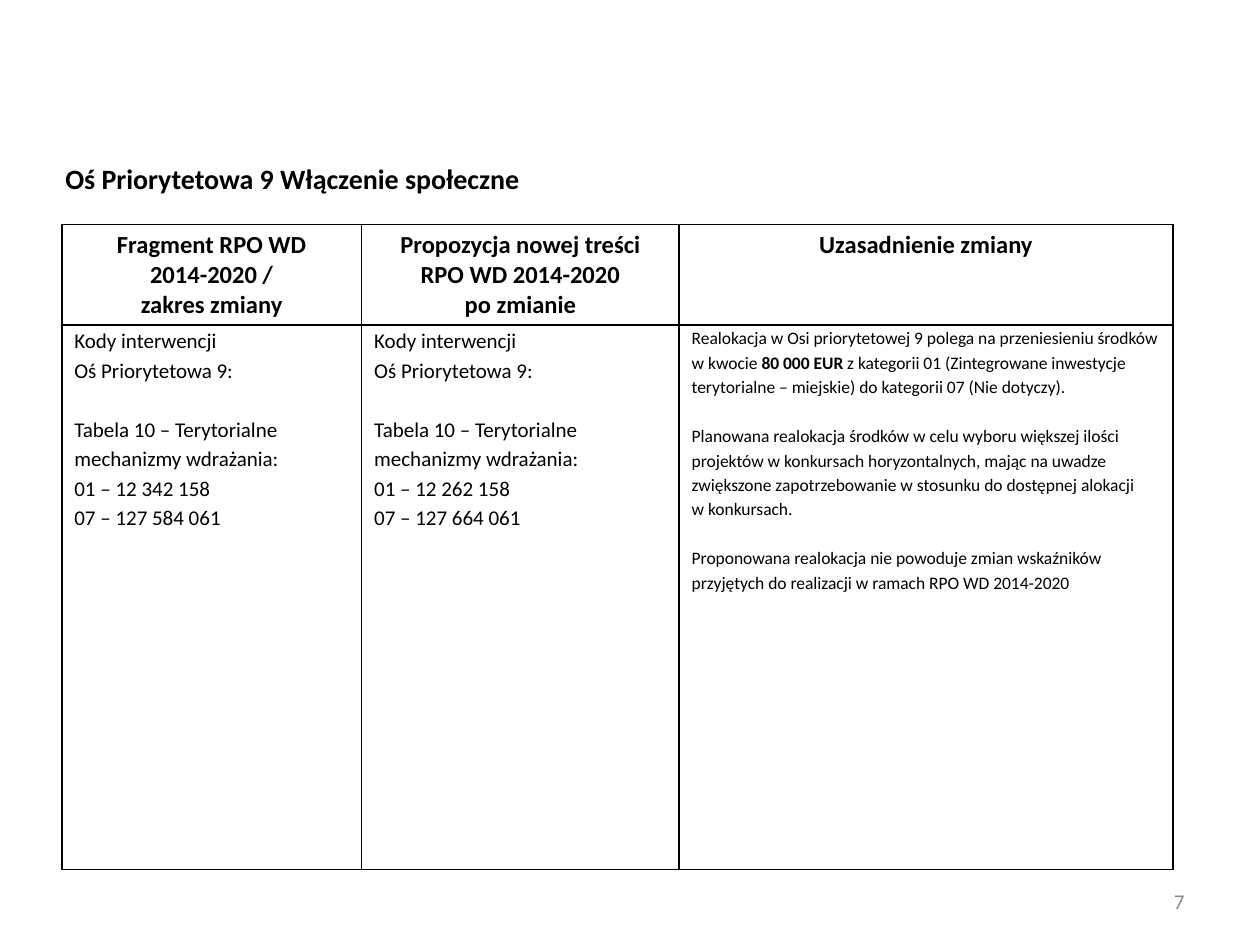
import pptx
import pptx.util
import pptx.dml.color
import pptx.enum.text
import pptx.oxml
import pptx.oxml.ns

Inches, Pt = pptx.util.Inches, pptx.util.Pt
ALIGN = pptx.enum.text.PP_ALIGN
ANCHOR = pptx.enum.text.MSO_ANCHOR

COLORS = {"text": "000000", "number": "898989", "border": "000000"}
FONT = "Calibri"
LINE_SPACING = 1.15
LINE_HEIGHT = 1.22 * LINE_SPACING  # height of one body line per point of text size


class SlideBuilder:
    def __init__(self, slide):
        self.slide = slide

    def style(self, r, size, color="text", bold=False):
        r.font.name = FONT
        r.font.size = Pt(size)
        r.font.bold = bold
        r.font.color.rgb = pptx.dml.color.RGBColor.from_string(COLORS[color])

    def text(self, box, text, size, color="text", bold=False,
             align=ALIGN.LEFT, anchor=ANCHOR.TOP):
        sp = self.slide.shapes.add_textbox(*map(Inches, box))
        tf = sp.text_frame
        tf.word_wrap = True
        tf.vertical_anchor = anchor
        tf.text = text
        p = tf.paragraphs[0]
        p.alignment = align
        self.style(p.runs[0], size, color, bold)

    def border(self, cell):
        tc_pr = cell._tc.get_or_add_tcPr()
        for i, side in enumerate(("lnL", "lnR", "lnT", "lnB")):
            tc_pr.insert(i, pptx.oxml.parse_xml(
                f'<a:{side} {pptx.oxml.ns.nsdecls("a")} w="{Pt(1)}"><a:solidFill>'
                f'<a:srgbClr val="{COLORS["border"]}"/></a:solidFill></a:{side}>'))

    def header_cell(self, cell, text):
        cell.text_frame.text = text
        p = cell.text_frame.paragraphs[0]
        p.alignment = ALIGN.CENTER
        for r in p.runs:
            self.style(r, 14, bold=True)

    def body_cell(self, cell, groups, size):
        """Each group is a list of paragraphs; asterisks enclose bold words."""
        cell.margin_top = cell.margin_bottom = 0
        tf = cell.text_frame
        p = None
        for group in groups:
            for i, line in enumerate(group):
                gap = p is not None and i == 0
                p = tf.paragraphs[0] if p is None else tf.add_paragraph()
                p.line_spacing = LINE_SPACING
                if gap:
                    p.space_before = Pt(round(size * LINE_HEIGHT, 1))
                for j, part in enumerate(line.split("*")):
                    r = p.add_run()
                    r.text = part
                    self.style(r, size, bold=j % 2 == 1)

    def table(self, box, widths, heights, headers, bodies):
        table = self.slide.shapes.add_table(
            len(heights), len(widths), *map(Inches, box)).table
        table.first_row = table.horz_banding = False
        for column, width in zip(table.columns, widths):
            column.width = Inches(width)
        for row, height in zip(table.rows, heights):
            row.height = Inches(height)
        for cell in table.iter_cells():
            cell.fill.background()
            self.border(cell)
        for i, (header, (groups, size)) in enumerate(zip(headers, bodies)):
            self.header_cell(table.cell(0, i), header)
            self.body_cell(table.cell(1, i), groups, size)


def codes(urban, other):
    return [["Kody interwencji", "Oś Priorytetowa 9:"],
            ["Tabela 10 – Terytorialne mechanizmy wdrażania:",
             f"01 – {urban}", f"07 – {other}"]]


REASONS = [
    ["Realokacja w Osi priorytetowej 9 polega na przeniesieniu środków w kwocie "
     "*80 000 EUR* z kategorii 01 (Zintegrowane inwestycje terytorialne – miejskie) "
     "do kategorii 07 (Nie dotyczy)."],
    ["Planowana realokacja środków w celu wyboru większej ilości projektów w konkursach "
     "horyzontalnych, mając na uwadze zwiększone zapotrzebowanie w stosunku do "
     "dostępnej alokacji",
     "w konkursach."],
    ["Proponowana realokacja nie powoduje zmian wskaźników przyjętych do realizacji "
     "w ramach RPO WD 2014-2020"],
]


def main():
    prs = pptx.Presentation()
    prs.slide_width, prs.slide_height = Inches(10), Inches(7.5)
    s = SlideBuilder(prs.slides.add_slide(prs.slide_layouts[6]))

    # Title
    s.text((0.42, 1.23, 9.45, 0.55), "Oś Priorytetowa 9 Włączenie społeczne", 16, bold=True)

    # Slide number
    s.text((7.17, 6.95, 2.33, 0.4), "7", 12, "number",
           align=ALIGN.RIGHT, anchor=ANCHOR.MIDDLE)

    # Table of proposed changes
    s.table((0.49, 1.78, 8.82, 5.12), (2.38, 2.52, 3.92), (0.8, 4.32),
            ("Fragment RPO WD\v2014-2020 /\vzakres zmiany",
             "Propozycja nowej treści\vRPO WD 2014-2020\vpo zmianie",
             "Uzasadnienie zmiany"),
            ((codes("12 342 158", "127 584 061"), 12),
             (codes("12 262 158", "127 664 061"), 12),
             (REASONS, 10)))

    prs.save("out.pptx")


if __name__ == "__main__":
    main()
